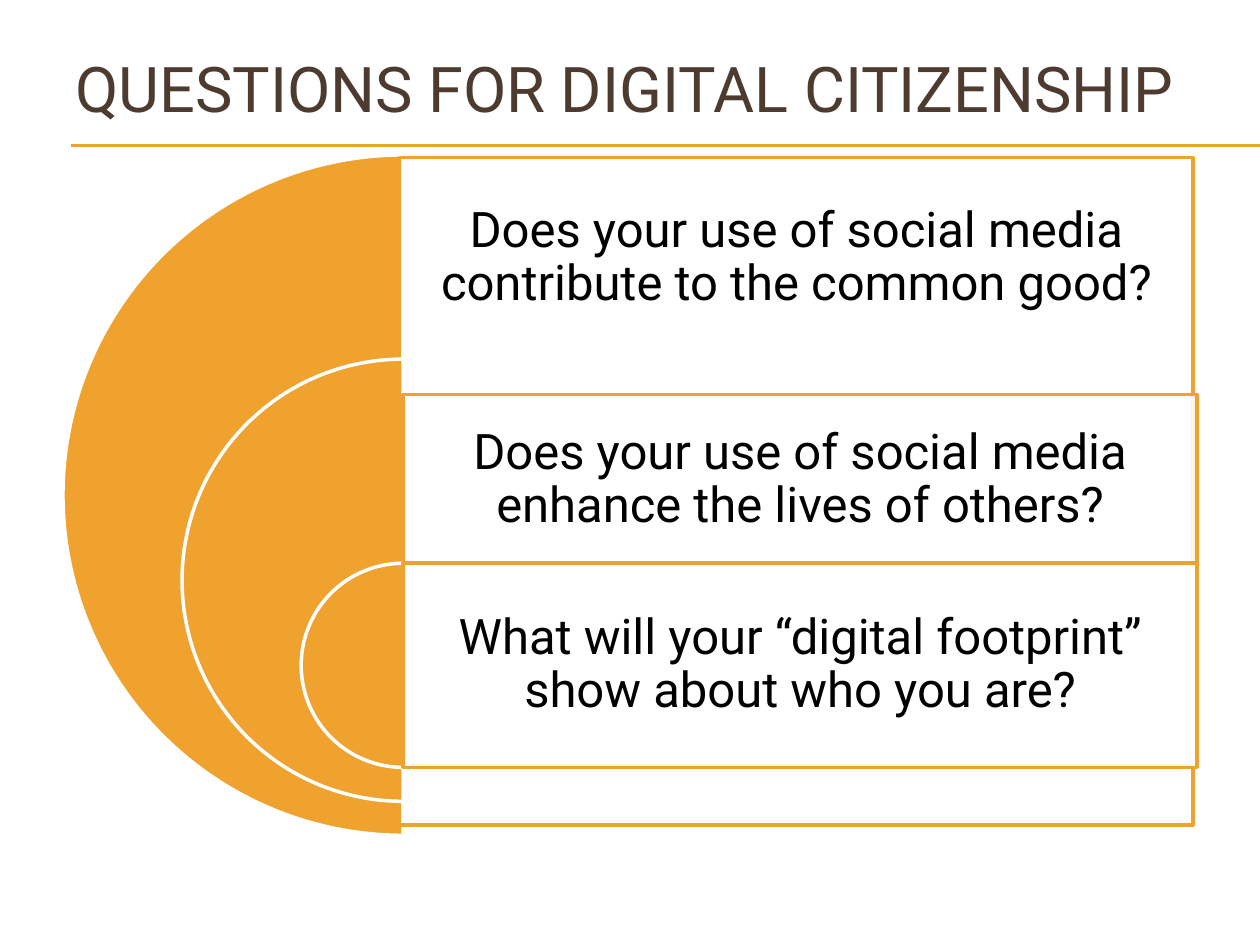
from lxml.etree import SubElement
from pptx import Presentation
from pptx.dml.color import RGBColor
from pptx.enum.shapes import MSO_CONNECTOR as CONN, MSO_SHAPE as SHAPE
from pptx.enum.text import MSO_ANCHOR as ANCHOR, PP_ALIGN as ALIGN
from pptx.oxml.ns import qn
from pptx.util import Inches, Pt

COLORS = {"accent": "F0A22E", "title": "4E3B30", "text": "000000", "white": "FFFFFF"}
FONT = "Roboto"
CENTER_X = 3.2  # shared centre of the half circles
BOX_WIDTH = 6.3

# circle top, diameter, box left, box top, box height, text height, question
LAYERS = [
    (1.23, 5.4, 3.17, 1.25, 5.3, 1.59,
     "Does your use of social media contribute to the common good?"),
    (2.85, 3.51, 3.2, 3.13, 2.95, 1.36,
     "Does your use of social media enhance the lives of others?"),
    (4.47, 1.62, 3.2, 4.47, 1.62, 1.62,
     "What will your “digital footprint” show about who you are?"),
]


def rgb(name):
    return RGBColor.from_string(COLORS[name])


def add_rule(s, y):
    line = s.shapes.add_connector(CONN.STRAIGHT, Inches(0.56), Inches(y),
                                  Inches(10), Inches(y))
    line.line.color.rgb = rgb("accent")
    line.line.width = Pt(0.75)
    SubElement(line._element.spPr, qn("a:effectLst"))


def add_shape(s, kind, box, fill, line):
    sp = s.shapes.add_shape(kind, *map(Inches, box))
    sp.shadow.inherit = False
    sp.fill.solid()
    sp.fill.fore_color.rgb = rgb(fill)
    sp.line.color.rgb = rgb(line)
    sp.line.width = Pt(2)
    return sp


def add_half_circle(s, top, size):
    sp = add_shape(s, SHAPE.PIE, (CENTER_X - size / 2, top, size, size),
                   "accent", "white")
    sp.adjustments[0] = 54  # 90 degrees
    sp.adjustments[1] = 162  # 270 degrees


def add_panel(s, left, top, height):
    sp = add_shape(s, SHAPE.RECTANGLE, (left, top, BOX_WIDTH, height),
                   "white", "accent")
    color = sp._element.spPr.find(qn("a:solidFill")).find(qn("a:srgbClr"))
    SubElement(color, qn("a:alpha"), val="90000")


def add_text(s, box, text, size, color, frame=None, para=None):
    tf = s.shapes.add_textbox(*map(Inches, box)).text_frame
    frame = {"word_wrap": True, "vertical_anchor": ANCHOR.MIDDLE, **(frame or {})}
    p = tf.paragraphs[0]
    r = p.add_run()
    r.text = text
    font = {"name": FONT, "size": Pt(size)}
    for target, values in ((tf, frame), (p, para or {}), (r.font, font)):
        for name, value in values.items():
            setattr(target, name, value)
    r.font.color.rgb = rgb(color)


def add_question(s, box, text):
    sides = ("left", "top", "right", "bottom")
    frame = {f"margin_{side}": Inches(0.12) for side in sides}
    para = {"alignment": ALIGN.CENTER, "line_spacing": 0.9}
    add_text(s, box, text, 28, "text", frame, para)


def main():
    prs = Presentation()
    prs.slide_width, prs.slide_height = Inches(10), Inches(7.5)
    s = prs.slides.add_slide(prs.slide_layouts[6])

    # Title and its double rule
    for y in (1.15, 1.16):
        add_rule(s, y)
    add_text(s, (0.5, 0.3, 9, 0.78), "QUESTIONS FOR DIGITAL CITIZENSHIP", 36, "title")

    # Nested half circles, each with a panel and a question
    for pie_top, size, left, top, height, text_height, question in LAYERS:
        add_half_circle(s, pie_top, size)
        add_panel(s, left, top, height)
        add_question(s, (left, top, BOX_WIDTH, text_height), question)

    prs.save("out.pptx")


if __name__ == "__main__":
    main()
